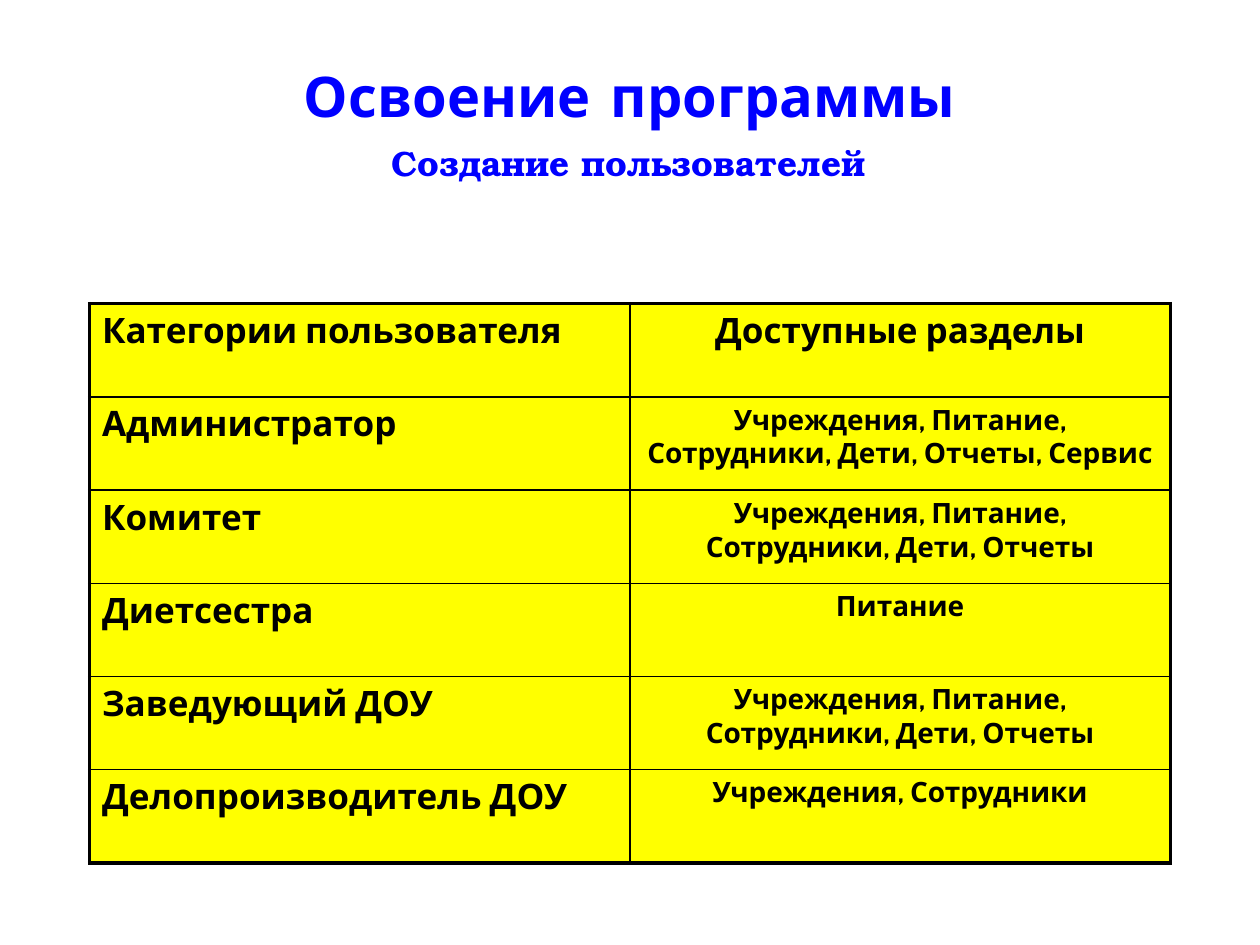
from typing import NamedTuple

from lxml import etree
from pptx import Presentation
from pptx import util as u
from pptx.dml.color import RGBColor
from pptx.enum import text
from pptx.oxml import ns

BLUE = RGBColor(0x00, 0x00, 0xFF)
YELLOW = RGBColor(0xFF, 0xFF, 0x00)
BLACK = RGBColor(0x00, 0x00, 0x00)
LEFT, CENTER = text.PP_ALIGN.LEFT, text.PP_ALIGN.CENTER
TOP, MIDDLE = text.MSO_ANCHOR.TOP, text.MSO_ANCHOR.MIDDLE
OUTER, INNER = 2.25, 1


class Heading(NamedTuple):
    words: str
    box: tuple[float, float, float, float]
    size: int
    font: str
    anchor: text.MSO_ANCHOR


class Access(NamedTuple):
    user: str
    sections: str
    size: int = 16


HEADINGS = [
    Heading("Создание пользователей", (2.7, 1.07, 4.58, 0.43), 20, "TeX Gyre Bonum", TOP),
    Heading("Освоение программы", (0.5, 0.28, 9, 0.95), 32, "Comic Neue", MIDDLE),
]
ROWS = [
    Access("Категории пользователя", "Доступные разделы", 20),
    Access("Администратор", "Учреждения, Питание, Сотрудники, Дети, Отчеты, Сервис"),
    Access("Комитет", "Учреждения, Питание, Сотрудники, Дети, Отчеты"),
    Access("Диетсестра", "Питание"),
    Access("Заведующий ДОУ", "Учреждения, Питание, Сотрудники, Дети, Отчеты"),
    Access("Делопроизводитель ДОУ", "Учреждения, Сотрудники"),
]


def write(tf, words: str, *, size: int, font: str, color: RGBColor, align=CENTER) -> None:
    p = tf.paragraphs[0]
    p.alignment = align
    r = p.add_run()
    r.text = words
    r.font.size = u.Pt(size)
    r.font.name = font
    r.font.bold = True
    r.font.color.rgb = color


def add_heading(s, h: Heading) -> None:
    sp = s.shapes.add_textbox(*map(u.Inches, h.box))
    tf = sp.text_frame
    tf.word_wrap = True
    tf.vertical_anchor = h.anchor
    write(tf, h.words, size=h.size, font=h.font, color=BLUE)


def set_borders(cell, widths: dict[str, float]) -> None:
    tc_pr = cell._tc.get_or_add_tcPr()
    for side, width in widths.items():
        ln = etree.SubElement(tc_pr, ns.qn(f"a:ln{side}"), w=str(u.Pt(width)))
        fill = etree.SubElement(ln, ns.qn("a:solidFill"))
        etree.SubElement(fill, ns.qn("a:srgbClr"), val=str(BLACK))


def add_access_table(s, rows: list[Access]) -> None:
    frame = s.shapes.add_table(len(rows), 2, u.Inches(0.71), u.Inches(2.41),
                               u.Inches(8.58), u.Inches(4.44))
    table = frame.table
    table.first_row = table.horz_banding = False
    for i, row in enumerate(rows):
        columns = [(row.user, 20, LEFT), (row.sections, row.size, CENTER)]
        for j, (words, size, align) in enumerate(columns):
            cell = table.cell(i, j)
            # Thick frame outside, thin rules inside
            edges = {"L": j == 0, "R": j == 1, "T": i == 0, "B": i == len(rows) - 1}
            set_borders(cell, {k: OUTER if edge else INNER for k, edge in edges.items()})
            cell.fill.solid()
            cell.fill.fore_color.rgb = YELLOW
            write(cell.text_frame, words, size=size, font="Cabin", color=BLACK, align=align)


def main() -> None:
    prs = Presentation()
    prs.slide_width, prs.slide_height = u.Inches(10), u.Inches(7.5)
    s = prs.slides.add_slide(prs.slide_layouts[6])

    # Title and subtitle
    for heading in HEADINGS:
        add_heading(s, heading)

    # User categories and the sections open to them
    add_access_table(s, ROWS)

    prs.save("out.pptx")


if __name__ == "__main__":
    main()
